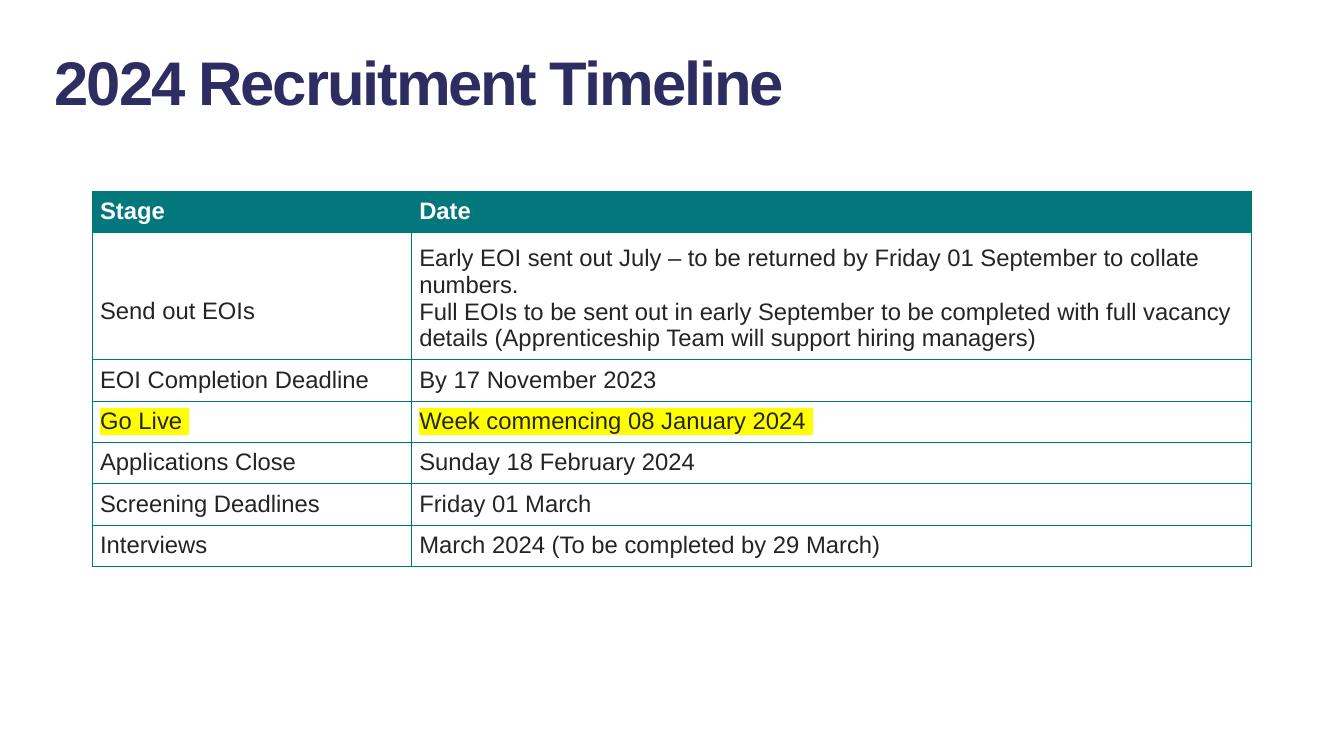
"""Build the 2024 recruitment timeline slide."""
from lxml import etree
from pptx import Presentation
from pptx.dml.color import RGBColor
from pptx.enum.text import MSO_ANCHOR
from pptx.oxml.ns import qn
from pptx.util import Pt

TITLE = "2024 Recruitment Timeline"
HEADINGS = ("Stage", "Date")
STAGES = [
    ("Send out EOIs",
     "Early EOI sent out July – to be returned by Friday 01 September to collate numbers.\n"
     "Full EOIs to be sent out in early September to be completed with full vacancy "
     "details (Apprenticeship Team will support hiring managers)"),
    ("EOI Completion Deadline", "By 17 November 2023"),
    ("Go Live ", "Week commencing 08 January 2024 "),
    ("Applications Close", "Sunday 18 February 2024"),
    ("Screening Deadlines", "Friday 01 March"),
    ("Interviews", "March 2024 (To be completed by 29 March)"),
]
EOI_ROW, GO_LIVE_ROW = 1, 3

NAVY = RGBColor(0x2E, 0x2D, 0x62)
TEAL = RGBColor(0x03, 0x78, 0x7C)
INK = RGBColor(0x24, 0x24, 0x24)
WHITE = RGBColor(0xFF, 0xFF, 0xFF)
YELLOW = RGBColor(0xFF, 0xFF, 0x00)
BOTTOM = MSO_ANCHOR.BOTTOM
FONT = "Arial"
COLUMN_WIDTHS = (228, 600)
ROW_HEIGHT, EOI_HEIGHT = 29.3, 90
TEXT_LINE = 19.5


def set_font(paragraph, size, color, bold):
    font = paragraph.font
    font.name, font.size, font.bold = FONT, Pt(size), bold
    font.color.rgb = color


def add_color(parent, tag, color):
    holder = etree.SubElement(parent, qn(tag))
    etree.SubElement(holder, qn("a:srgbClr"), val=str(color))


def add_borders(cell):
    properties = cell._tc.get_or_add_tcPr()
    for side in ("a:lnL", "a:lnR", "a:lnT", "a:lnB"):
        line = etree.SubElement(properties, qn(side), w=str(Pt(0.75)))
        add_color(line, "a:solidFill", TEAL)


def fill_cell(cell, text, row):
    is_heading = row == 0
    add_borders(cell)
    cell.fill.solid()
    cell.fill.fore_color.rgb = TEAL if is_heading else WHITE
    cell.vertical_anchor = BOTTOM
    cell.margin_left, cell.margin_right = Pt(5.5), Pt(11)
    cell.margin_top, cell.margin_bottom = Pt(3.6), Pt(5.5)
    cell.text_frame.text = text
    for paragraph in cell.text_frame.paragraphs:
        set_font(paragraph, 17, WHITE if is_heading else INK, is_heading)
        if row == GO_LIVE_ROW:
            add_color(paragraph.runs[0]._r.get_or_add_rPr(), "a:highlight", YELLOW)


def add_title(slide):
    frame = slide.shapes.add_textbox(Pt(32), Pt(27.5), Pt(561), Pt(60.5)).text_frame
    frame.word_wrap = True
    frame.text = TITLE
    heading = frame.paragraphs[0]
    set_font(heading, 44, NAVY, True)
    heading.runs[0]._r.get_or_add_rPr().set("spc", "-150")


def add_timeline(slide):
    rows = [HEADINGS, *STAGES]
    heights = [EOI_HEIGHT if row == EOI_ROW else ROW_HEIGHT for row in range(len(rows))]
    timeline = slide.shapes.add_table(
        len(rows), len(HEADINGS), Pt(66), Pt(136.6),
        Pt(sum(COLUMN_WIDTHS)), Pt(sum(heights))).table
    timeline.horz_banding = False
    for column, width in zip(timeline.columns, COLUMN_WIDTHS):
        column.width = Pt(width)
    for row, (texts, height) in enumerate(zip(rows, heights)):
        timeline.rows[row].height = Pt(height)
        for column, text in enumerate(texts):
            fill_cell(timeline.cell(row, column), text, row)
    timeline.cell(EOI_ROW, 0).margin_bottom = Pt(5.5 + TEXT_LINE)


def main():
    deck = Presentation()
    deck.slide_width, deck.slide_height = Pt(960), Pt(540)
    slide = deck.slides.add_slide(deck.slide_layouts[6])
    add_title(slide)
    add_timeline(slide)
    deck.save("out.pptx")


if __name__ == "__main__":
    main()
